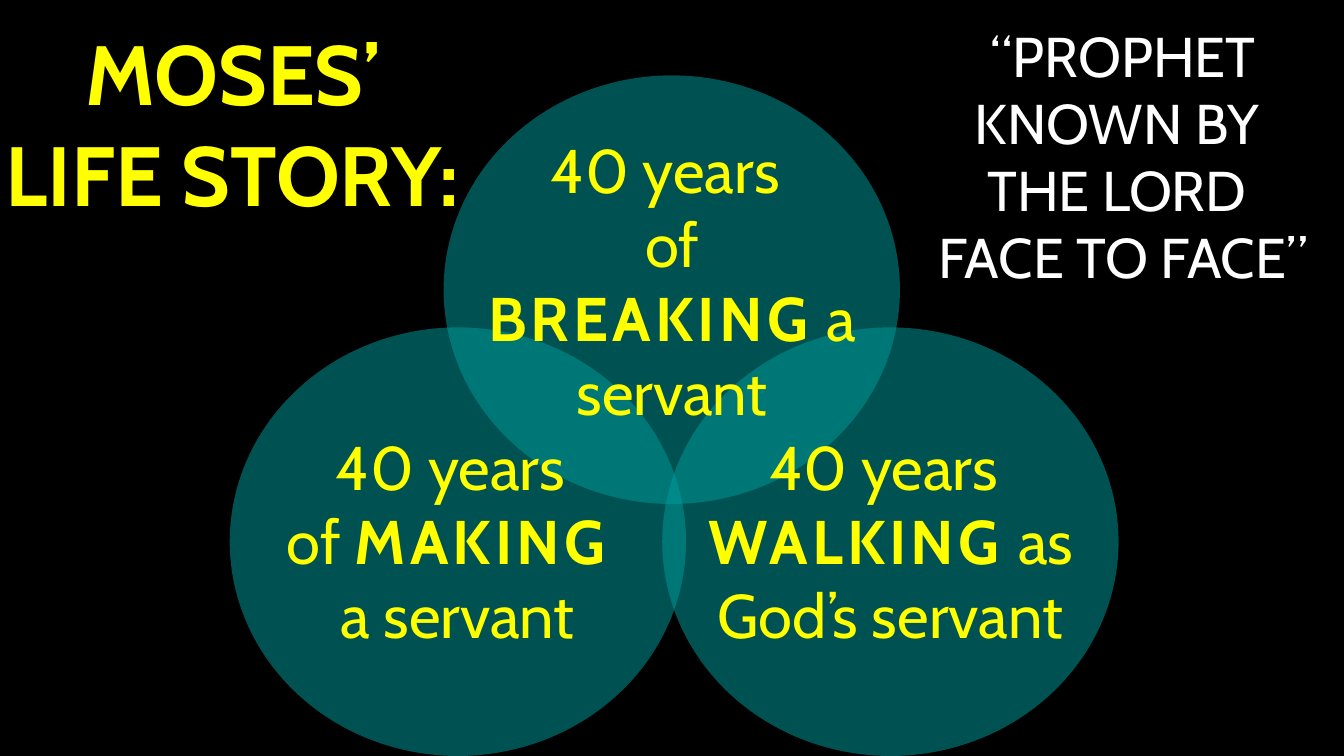
from lxml import etree
from pptx import Presentation
from pptx.dml.color import RGBColor
from pptx.enum.shapes import MSO_SHAPE
from pptx.enum.text import MSO_AUTO_SIZE, PP_ALIGN
from pptx.oxml.ns import qn
from pptx.util import Cm, Pt

ELLIPSE = MSO_SHAPE.OVAL
CENTER = PP_ALIGN.CENTER
GROW = MSO_AUTO_SIZE.SHAPE_TO_FIT_TEXT
COLORS = {"background": "000000", "teal": "009999", "yellow": "FFFF00", "white": "FFFFFF"}
CIRCLE_WIDTH, CIRCLE_HEIGHT = 11.5, 10.8
OPACITY = "53000"
LETTER_SPACING = "300"

presentation = Presentation()
presentation.slide_width = Cm(33.87)
presentation.slide_height = Cm(19.05)
slide = presentation.slides.add_slide(presentation.slide_layouts[6])
slide.background.fill.solid()
slide.background.fill.fore_color.rgb = RGBColor.from_string(COLORS["background"])

for left, top in [(5.79, 8.25), (11.18, 1.9), (16.69, 8.25)]:
    circle = slide.shapes.add_shape(
        ELLIPSE, Cm(left), Cm(top), Cm(CIRCLE_WIDTH), Cm(CIRCLE_HEIGHT))
    circle.shadow.inherit = False
    circle.fill.solid()
    circle.fill.fore_color.rgb = RGBColor.from_string(COLORS["teal"])
    circle.line.fill.background()
    color_element = circle.fill._xPr.find(qn("a:solidFill"))[0]
    etree.SubElement(color_element, qn("a:alpha")).set("val", OPACITY)

STAGE = {"size": Pt(44), "name": "Cabin", "bold": False}
TITLE = {"size": Pt(60), "name": "Cabin", "bold": True}
QUOTE = {"size": Pt(40), "name": "Cabin", "bold": False}

text_boxes = [
    ((11.91, 3.2, 10.06, 5.89), STAGE, "yellow",
     [[("40 years \nof ", False), ("BREAKING", True), (" a servant", False)]]),
    ((6.5, 10.69, 10.06, 5.89), STAGE, "yellow",
     [[("40 years \nof ", False), ("MAKING \n", True), ("a servant", False)]]),
    ((16.41, 10.69, 12.07, 5.89), STAGE, "yellow",
     [[("40 years \n", False), ("WALKING", True), (" as God’s servant", False)]]),
    ((-0.33, 0.41, 12.37, 5.38), TITLE, "yellow",
     [[("MOSES’", False)], [("LIFE STORY:", False)]]),
    ((22.78, 0.41, 11.05, 7.09), QUOTE, "white",
     [[("“PROPHET KNOWN BY \nTHE LORD \nFACE TO FACE”", False)]]),
]

for box, text_format, color, paragraphs in text_boxes:
    text_frame = slide.shapes.add_textbox(*map(Cm, box)).text_frame
    text_frame.word_wrap = True
    text_frame.auto_size = GROW
    for number, parts in enumerate(paragraphs):
        paragraph = text_frame.add_paragraph() if number else text_frame.paragraphs[0]
        paragraph.alignment = CENTER
        for text, emphasized in parts:
            for line_number, line in enumerate(text.split("\n")):
                if line_number:
                    paragraph.add_line_break()
                if not line:
                    continue
                run = paragraph.add_run()
                run.text = line
                for name, value in text_format.items():
                    setattr(run.font, name, value)
                run.font.color.rgb = RGBColor.from_string(COLORS[color])
                if emphasized:
                    run.font.bold = True
                    run.font._element.set("spc", LETTER_SPACING)

presentation.save("out.pptx")
